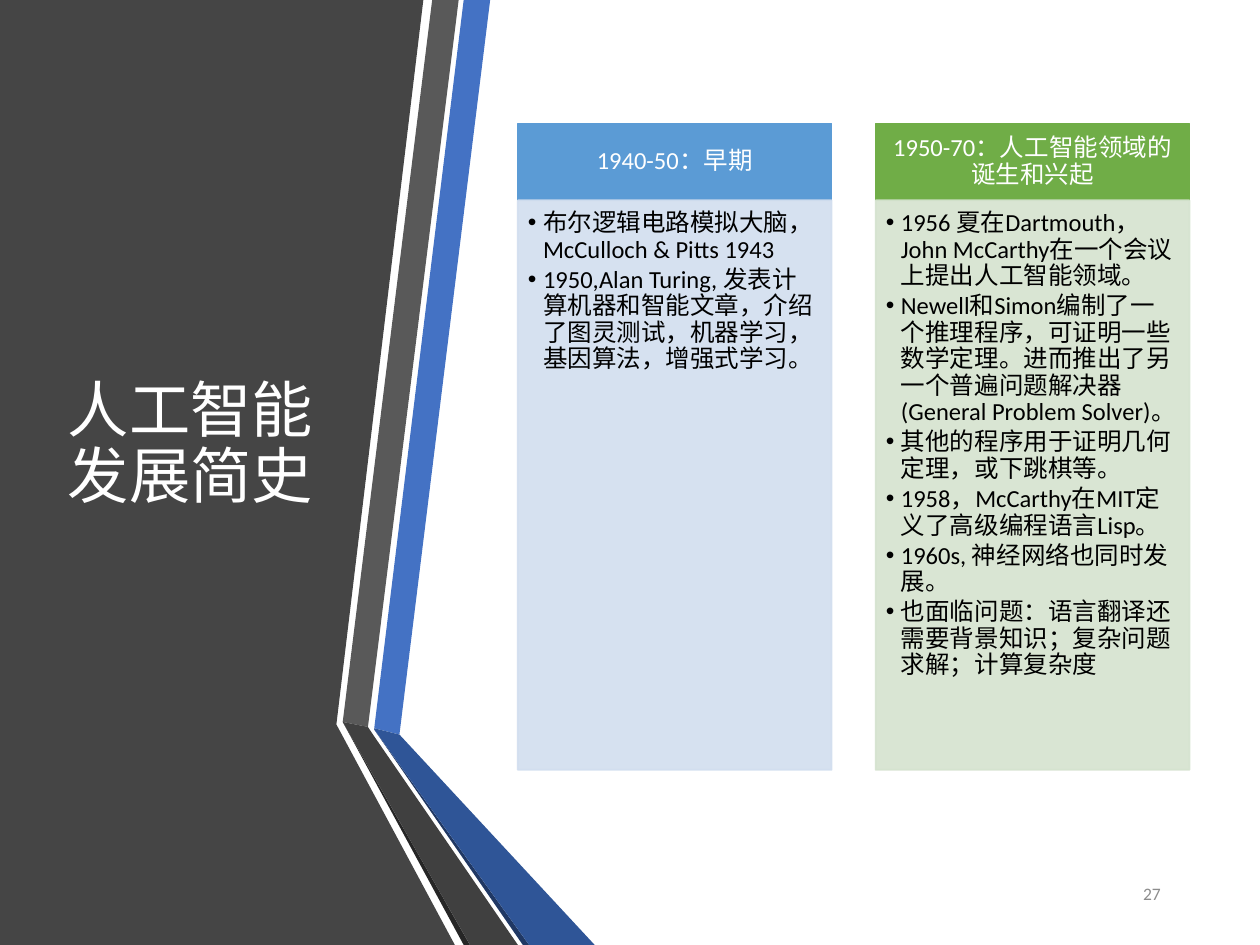
from lxml.etree import SubElement
from pptx import Presentation
from pptx.dml.color import RGBColor
from pptx.enum.shapes import MSO_SHAPE
from pptx.enum.text import MSO_ANCHOR, PP_ALIGN
from pptx.oxml.ns import qn
from pptx.util import Inches, Pt

TITLE = "人工智能发展简史"
PAGE = "27"
ERAS = [
    ("1940-50：早期", "5B9BD5", "D2DEEF", [
        "布尔逻辑电路模拟大脑，McCulloch & Pitts 1943",
        "1950,Alan Turing, 发表计算机器和智能文章，介绍了图灵测试，机器学习，基因算法，增强式学习。",
    ]),
    ("1950-70：人工智能领域的诞生和兴起", "70AD47", "D5E3CF", [
        "1956 夏在Dartmouth，John McCarthy在一个会议上提出人工智能领域。",
        "Newell和Simon编制了一个推理程序，可证明一些数学定理。进而推出了另一个普遍问题解决器(General Problem Solver)。",
        "其他的程序用于证明几何定理，或下跳棋等。",
        "1958，McCarthy在MIT定义了高级编程语言Lisp。",
        "1960s, 神经网络也同时发展。",
        "也面临问题：语言翻译还需要背景知识；复杂问题求解；计算复杂度",
    ]),
]
BANDS = [
    ("454545", [(0, 0), (3.36, 0), (2.67, 5.75), (3.61, 7.5), (0, 7.5)]),
    ("4472C4", [(2.97, 5.78), (3.17, 5.83), (3.89, 0), (3.68, 0)]),
    ("595959", [(3.64, 0), (3.43, 0), (2.72, 5.73), (2.92, 5.77)]),
    ("262626", [(2.72, 5.73), (3.68, 7.5), (3.73, 7.5)]),
    ("203864", [(2.97, 5.79), (4.15, 7.5), (4.2, 7.5)]),
    ("2F5597", [(2.97, 5.79), (4.2, 7.5), (4.72, 7.5), (3.17, 5.83), (2.97, 5.78)]),
    ("404040", [(4.11, 7.5), (2.96, 5.83), (2.92, 5.77), (2.72, 5.73), (3.73, 7.5)]),
]
LEFT, TOP, WIDTH, STEP = 4.11, 0.98, 2.49, 2.84
HEAD, BODY = 0.61, 4.52


def paint(fill, color, alpha=None):
    fill.solid()
    fill.fore_color.rgb = RGBColor.from_string(color)
    if alpha:
        node = fill._xPr.find(qn("a:solidFill"))[0]
        SubElement(node, qn("a:alpha"), val=str(alpha * 1000))


def write(shape, lines, size, color, align=PP_ALIGN.LEFT, anchor=MSO_ANCHOR.MIDDLE,
          inset=(0.1, 0.05, 0.1, 0.05), after=0):
    frame = shape.text_frame
    frame.text = "\n".join(lines)
    frame.word_wrap = True
    frame.vertical_anchor = anchor
    (frame.margin_left, frame.margin_top,
     frame.margin_right, frame.margin_bottom) = map(Inches, inset)
    for para in frame.paragraphs:
        para.alignment = align
        para.line_spacing = 0.9
        para.space_after = Pt(after)
        for run in para.runs:
            run.font.size = Pt(size)
            run.font.name = "Calibri"
            run.font.color.rgb = RGBColor.from_string(color)


def add_bullets(frame):
    for para in frame.paragraphs:
        props = para._p.get_or_add_pPr()
        props.set("marL", str(Inches(0.12)))
        props.set("indent", str(Inches(-0.12)))
        SubElement(props, qn("a:buFont"), typeface="Arial")
        SubElement(props, qn("a:buChar"), char="•")


def add_band(shapes, color, points):
    dots = [(Inches(x), Inches(y)) for x, y in points]
    pen = shapes.build_freeform(*dots[0])
    pen.add_line_segments(dots[1:], close=True)
    band = pen.convert_to_shape()
    band.shadow.inherit = False
    paint(band.fill, color)
    band.line.fill.background()


def add_box(shapes, place, color, alpha=None):
    box = shapes.add_shape(MSO_SHAPE.RECTANGLE, *map(Inches, place))
    box.shadow.inherit = False
    paint(box.fill, color, alpha)
    paint(box.line.fill, color, alpha)
    box.line.width = Pt(1)
    return box


def add_era(shapes, left, era):
    name, dark, light, facts = era
    head = add_box(shapes, (left, TOP, WIDTH, HEAD), dark)
    write(head, [name], 14, "FFFFFF", PP_ALIGN.CENTER,
          inset=(0.11, 0.06, 0.11, 0.06))
    body = add_box(shapes, (left, TOP + HEAD, WIDTH, BODY), light, 90)
    write(body, facts, 14, "000000", anchor=MSO_ANCHOR.TOP,
          inset=(0.08, 0.08, 0.11, 0.12), after=2.1)
    add_bullets(body.text_frame)


def main():
    deck = Presentation()
    deck.slide_width, deck.slide_height = Inches(10), Inches(7.5)
    shapes = deck.slides.add_slide(deck.slide_layouts[6]).shapes
    for color, points in BANDS:
        add_band(shapes, color, points)
    title = shapes.add_textbox(*map(Inches, (0.44, 0.75, 2.28, 5.58)))
    write(title, [TITLE], 35, "FFFFFF")
    page = shapes.add_textbox(*map(Inches, (8.42, 6.9, 0.89, 0.4)))
    write(page, [PAGE], 10, "8C8C8C", PP_ALIGN.RIGHT)
    for i, era in enumerate(ERAS):
        add_era(shapes, LEFT + i * STEP, era)
    deck.save("out.pptx")


if __name__ == "__main__":
    main()
